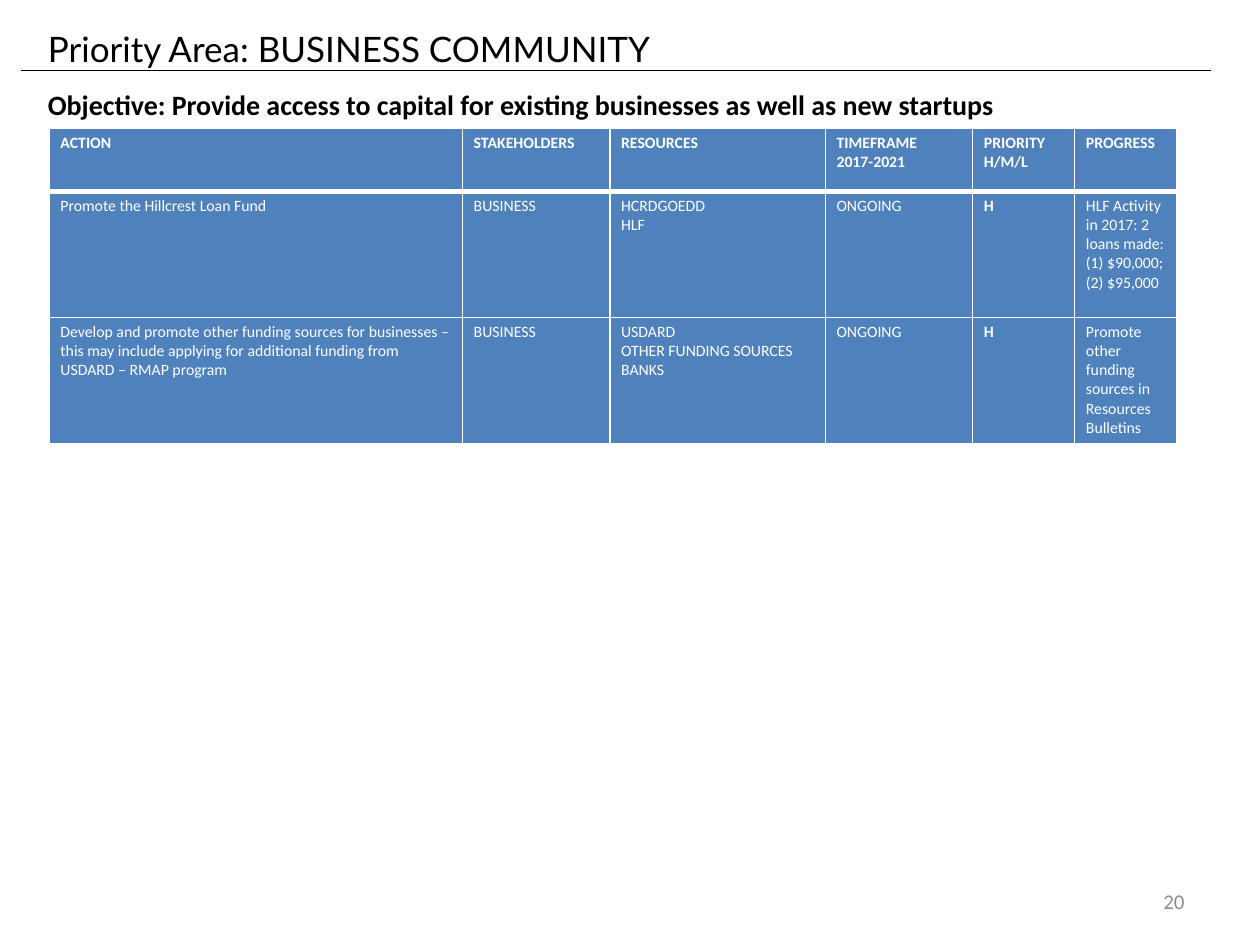
"""Build the business community priority slide with its action table."""
from lxml import etree
from pptx import Presentation
from pptx.dml.color import RGBColor
from pptx.enum.shapes import MSO_CONNECTOR
from pptx.enum.text import MSO_ANCHOR, MSO_AUTO_SIZE, PP_ALIGN
from pptx.oxml.ns import qn
from pptx.util import Inches, Pt

STRAIGHT = MSO_CONNECTOR.STRAIGHT
TOP, MIDDLE = MSO_ANCHOR.TOP, MSO_ANCHOR.MIDDLE
LEFT, RIGHT = PP_ALIGN.LEFT, PP_ALIGN.RIGHT
NO_AUTOFIT = MSO_AUTO_SIZE.NONE

BLACK = RGBColor(0x00, 0x00, 0x00)
WHITE = RGBColor(0xFF, 0xFF, 0xFF)
GRAY = RGBColor(0x8C, 0x8C, 0x8C)
BLUE = RGBColor(0x4F, 0x81, 0xBD)

TITLE = "Priority Area: BUSINESS COMMUNITY"
OBJECTIVE = "Objective: Provide access to capital for existing businesses as well as new startups"
PAGE_NUMBER = "20"
ROWS = [
    ["ACTION", "STAKEHOLDERS", "RESOURCES", "TIMEFRAME\n2017-2021", "PRIORITY\nH/M/L", "PROGRESS"],
    ["Promote the Hillcrest Loan Fund", "BUSINESS", "HCRDGOEDD\nHLF", "ONGOING", "H",
     "HLF Activity in 2017: 2 loans made: (1) $90,000; (2) $95,000"],
    ["Develop and promote other funding sources for businesses – this may include applying "
     "for additional funding from USDARD – RMAP program", "BUSINESS",
     "USDARD\nOTHER FUNDING SOURCES\nBANKS", "ONGOING", "H",
     "Promote other funding sources in Resources Bulletins"],
]
COLUMN_WIDTHS = [3.28, 1.17, 1.71, 1.17, 0.81, 0.81]
ROW_HEIGHTS = [0.5, 1, 1]
PRIORITY_COLUMN = 4
THIN, THICK = 1, 3

TITLE_FORMAT = {"name": "Lato", "size": Pt(20), "bold": False}
OBJECTIVE_FORMAT = {"name": "Calibri", "size": Pt(16), "bold": True}
CELL_FORMAT = {"name": "Calibri", "size": Pt(9)}
NUMBER_FORMAT = {"name": "Calibri", "size": Pt(12), "bold": False}
CELL_LAYOUT = {"margin_left": Inches(0.09), "margin_right": Inches(0.09),
               "margin_top": Inches(0.04), "margin_bottom": Inches(0.04),
               "vertical_anchor": TOP}


def set_all(target, values):
    for name, value in values.items():
        setattr(target, name, value)


def place(shape, left, top, width, height):
    set_all(shape, {"left": Inches(left), "top": Inches(top),
                    "width": Inches(width), "height": Inches(height)})


def write(frame, lines, font_format, color, align=LEFT):
    frame.text = "\n".join(lines)
    for para in frame.paragraphs:
        para.alignment = align
        set_all(para.font, font_format)
        para.font.color.rgb = color


def add_borders(cell, widths):
    properties = cell._tc.get_or_add_tcPr()
    for side, width in widths.items():
        line = etree.SubElement(properties, qn(f"a:ln{side}"), w=str(Pt(width)))
        fill = etree.SubElement(line, qn("a:solidFill"))
        etree.SubElement(fill, qn("a:srgbClr"), val=str(WHITE))


def add_heading(page):
    heading = page.shapes.title
    place(heading, 0.28, 0.17, 9.5, 0.84)
    frame = heading.text_frame
    set_all(frame, {"word_wrap": True, "auto_size": NO_AUTOFIT, "vertical_anchor": TOP})
    write(frame, [TITLE, OBJECTIVE], TITLE_FORMAT, BLACK)
    objective = frame.paragraphs[1]
    objective.space_before = Pt(10)
    set_all(objective.font, OBJECTIVE_FORMAT)


def add_action_table(page):
    holder = page.shapes.add_table(len(ROWS), len(COLUMN_WIDTHS), Inches(0.39), Inches(1.02),
                                   Inches(sum(COLUMN_WIDTHS)), Inches(sum(ROW_HEIGHTS)))
    table = holder.table
    for column, width in zip(table.columns, COLUMN_WIDTHS):
        column.width = Inches(width)
    for row, height in zip(table.rows, ROW_HEIGHTS):
        row.height = Inches(height)
    for r, texts in enumerate(ROWS):
        for c, text in enumerate(texts):
            cell = table.cell(r, c)
            set_all(cell, CELL_LAYOUT)
            add_borders(cell, {"L": THIN, "R": THIN, "T": THICK if r == 1 else THIN,
                               "B": THICK if r == 0 else THIN})
            cell.fill.solid()
            cell.fill.fore_color.rgb = BLUE
            bold = r == 0 or c == PRIORITY_COLUMN
            write(cell.text_frame, [text], {**CELL_FORMAT, "bold": bold}, WHITE)


def add_rule(page):
    rule = page.shapes.add_connector(STRAIGHT, Inches(0.17), Inches(0.56),
                                     Inches(9.61), Inches(0.56))
    rule.line.color.rgb = BLACK
    rule.line.width = Pt(0.75)
    etree.SubElement(rule._element.spPr, qn("a:effectLst"))


def add_page_number(page):
    box = page.shapes.add_textbox(Inches(7.17), Inches(6.95), Inches(2.33), Inches(0.4))
    set_all(box.text_frame, {"word_wrap": True, "vertical_anchor": MIDDLE})
    write(box.text_frame, [PAGE_NUMBER], NUMBER_FORMAT, GRAY, RIGHT)


def main():
    deck = Presentation()
    set_all(deck, {"slide_width": Inches(10), "slide_height": Inches(7.5)})
    page = deck.slides.add_slide(deck.slide_layouts.get_by_name("Title Only"))
    add_heading(page)
    add_action_table(page)
    add_rule(page)
    add_page_number(page)
    deck.save("out.pptx")


if __name__ == "__main__":
    main()
